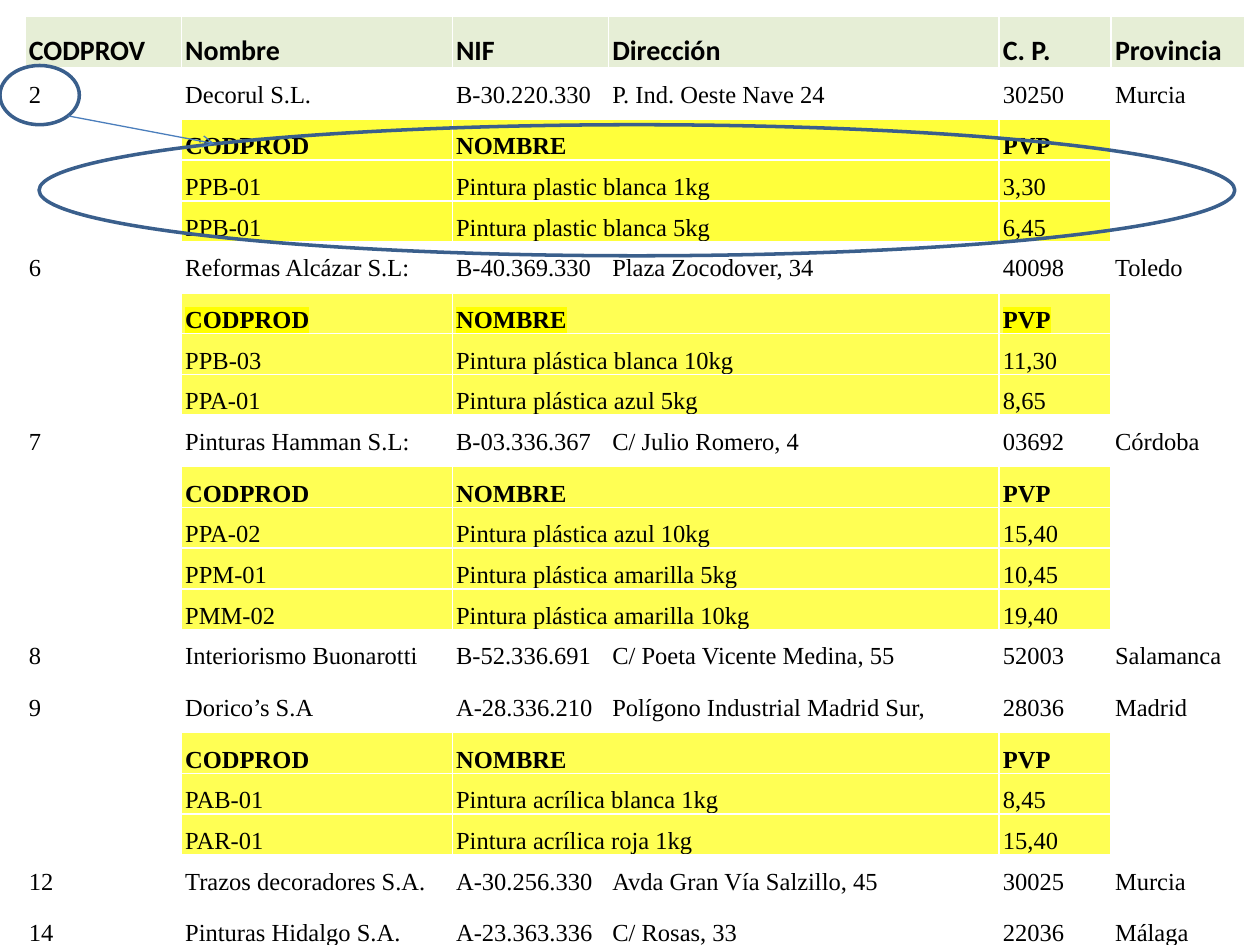
from dataclasses import dataclass

from lxml.etree import SubElement
from pptx import Presentation
from pptx.dml.color import RGBColor as RGB
from pptx.enum.shapes import MSO_CONNECTOR as CONNECTOR, MSO_SHAPE as SHAPE
from pptx.oxml.ns import qn
from pptx.util import Inches, Pt


@dataclass(frozen=True)
class Theme:
    header_font: str = "Calibri"
    body_font: str = "Times New Roman"
    header_size: int = 16
    body_size: int = 14
    text: str = "000000"
    header_fill: str = "D7E4BD"
    product_fill: str = "FFFF00"
    border: str = "FFFFFF"
    ellipse: str = "3A5F8C"
    arrow: str = "4B7EBC"


THEME = Theme()
COLUMN_WIDTHS = (1.24, 2.15, 1.24, 3.1, 0.89, 1.06)
PRODUCT_ROW, SUPPLIER_ROW = 0.19, 0.41
HEADINGS = ("CODPROV", "Nombre", "NIF", "Dirección", "C. P.", "Provincia")
PRODUCT_HEADINGS = ("CODPROD", "NOMBRE", "PVP")
HIGHLIGHTED_SUPPLIER = "6"

# Each supplier with its products and the opacity of their fill in percent
SUPPLIERS = (
    (("2", "Decorul S.L.", "B-30.220.330", "P. Ind. Oeste Nave 24", "30250", "Murcia"), 77,
     (("PPB-01", "Pintura plastic blanca 1kg", "3,30"),
      ("PPB-01", "Pintura plastic blanca 5kg", "6,45"))),
    (("6", "Reformas Alcázar S.L:", "B-40.369.330", "Plaza Zocodover, 34", "40098", "Toledo"), 67,
     (("PPB-03", "Pintura plástica blanca 10kg", "11,30"),
      ("PPA-01", "Pintura plástica azul 5kg", "8,65"))),
    (("7", "Pinturas Hamman S.L:", "B-03.336.367", "C/ Julio Romero, 4", "03692", "Córdoba"), 67,
     (("PPA-02", "Pintura plástica azul 10kg", "15,40"),
      ("PPM-01", "Pintura plástica amarilla 5kg", "10,45"),
      ("PMM-02", "Pintura plástica amarilla 10kg", "19,40"))),
    (("8", "Interiorismo Buonarotti", "B-52.336.691", "C/ Poeta Vicente Medina, 55",
      "52003", "Salamanca"), 67, ()),
    (("9", "Dorico’s S.A", "A-28.336.210", "Polígono Industrial Madrid Sur,",
      "28036", "Madrid"), 67,
     (("PAB-01", "Pintura acrílica blanca 1kg", "8,45"),
      ("PAR-01", "Pintura acrílica roja 1kg", "15,40"))),
    (("12", "Trazos decoradores S.A.", "A-30.256.330", "Avda Gran Vía Salzillo, 45",
      "30025", "Murcia"), 67, ()),
    (("14", "Pinturas Hidalgo S.A.", "A-23.363.336", "C/ Rosas, 33", "22036", "Málaga"), 67, ()),
)


@dataclass(frozen=True)
class RowStyle:
    height: float
    font: str = THEME.body_font
    size: int = THEME.body_size
    bold: bool = False
    fill: str = ""
    opacity: int = 100
    highlight: bool = False


def table_rows():
    """Return (texts, style) for every row; product rows leave the outer columns empty."""
    header = RowStyle(PRODUCT_ROW, THEME.header_font, THEME.header_size, True,
                      THEME.header_fill, 62)
    rows = [(HEADINGS, header)]
    for supplier, opacity, products in SUPPLIERS:
        rows.append((supplier, RowStyle(SUPPLIER_ROW)))
        lines = (PRODUCT_HEADINGS, *products) if products else ()
        for position, (code, name, price) in enumerate(lines):
            heading = position == 0
            style = RowStyle(PRODUCT_ROW, bold=heading, fill=THEME.product_fill, opacity=opacity,
                             highlight=heading and supplier[0] == HIGHLIGHTED_SUPPLIER)
            rows.append((("", code, name, None, price, ""), style))
    return rows


def add_borders(cell):
    properties = cell._tc.get_or_add_tcPr()
    for side in ("lnL", "lnR", "lnT", "lnB"):
        border = SubElement(properties, qn(f"a:{side}"), w=str(Pt(1)))
        SubElement(SubElement(border, qn("a:solidFill")), qn("a:srgbClr"), val=THEME.border)


def fill_cell(cell, color, opacity):
    cell.fill.solid()
    cell.fill.fore_color.rgb = RGB.from_string(color)
    color_node = cell._tc.tcPr.find(f"{qn('a:solidFill')}/{qn('a:srgbClr')}")
    SubElement(color_node, qn("a:alpha"), val=str(opacity * 1000))


def highlight_run(run):
    properties = run._r.get_or_add_rPr()
    highlight = SubElement(properties, qn("a:highlight"))
    SubElement(highlight, qn("a:srgbClr"), val=THEME.product_fill)
    properties.find(qn("a:solidFill")).addnext(highlight)


def write_cell(cell, text, style):
    cell.margin_left = cell.margin_right = Inches(0.03)
    cell.margin_top = cell.margin_bottom = 0
    add_borders(cell)
    if text and style.fill:
        fill_cell(cell, style.fill, style.opacity)
    else:
        cell.fill.background()
    paragraph = cell.text_frame.paragraphs[0]
    if not text:
        SubElement(paragraph._p, qn("a:endParaRPr"), sz=str(style.size * 100))
        return
    paragraph.text = text
    paragraph.line_spacing = 1.5
    run = paragraph.runs[0]
    run.font.name = style.font
    run.font.size = Pt(style.size)
    run.font.bold = style.bold
    run.font.color.rgb = RGB.from_string(THEME.text)
    if style.highlight:
        highlight_run(run)


def add_supplier_table(slide):
    rows = table_rows()
    frame = slide.shapes.add_table(len(rows), len(COLUMN_WIDTHS), Inches(0.2), Inches(0.13),
                                   Inches(9.69), Inches(7.81))
    table = frame.table
    table.first_row = table.horz_banding = False
    for column, width in zip(table.columns, COLUMN_WIDTHS):
        column.width = Inches(width)
    for row_index, (texts, style) in enumerate(rows):
        table.rows[row_index].height = Inches(style.height)
        for column_index, text in enumerate(texts):
            cell = table.cell(row_index, column_index)
            write_cell(cell, text, style)
            if text is None:
                table.cell(row_index, column_index - 1).merge(cell)
    frame.height = Inches(7.81)


def add_ellipse(slide, left, top, width, height):
    ellipse = slide.shapes.add_shape(SHAPE.OVAL, Inches(left), Inches(top),
                                     Inches(width), Inches(height))
    ellipse.shadow.inherit = False
    ellipse.fill.background()
    ellipse.line.color.rgb = RGB.from_string(THEME.ellipse)
    ellipse.line.width = Pt(2)


def add_arrow(slide, start, end):
    arrow = slide.shapes.add_connector(CONNECTOR.STRAIGHT, *map(Inches, start + end))
    arrow.line.color.rgb = RGB.from_string(THEME.arrow)
    arrow.line.width = Pt(0.75)
    SubElement(arrow.line._get_or_add_ln(), qn("a:tailEnd"), type="arrow")
    SubElement(arrow._element.spPr, qn("a:effectLst"))


def main():
    deck = Presentation()
    deck.slide_width, deck.slide_height = Inches(10), Inches(7.5)
    slide = deck.slides.add_slide(deck.slide_layouts[6])
    add_supplier_table(slide)
    add_ellipse(slide, 0, 0.52, 0.63, 0.47)
    add_ellipse(slide, 0.31, 0.99, 9.49, 1.04)
    add_arrow(slide, (0.54, 0.92), (1.7, 1.14))
    deck.save("out.pptx")


if __name__ == "__main__":
    main()
